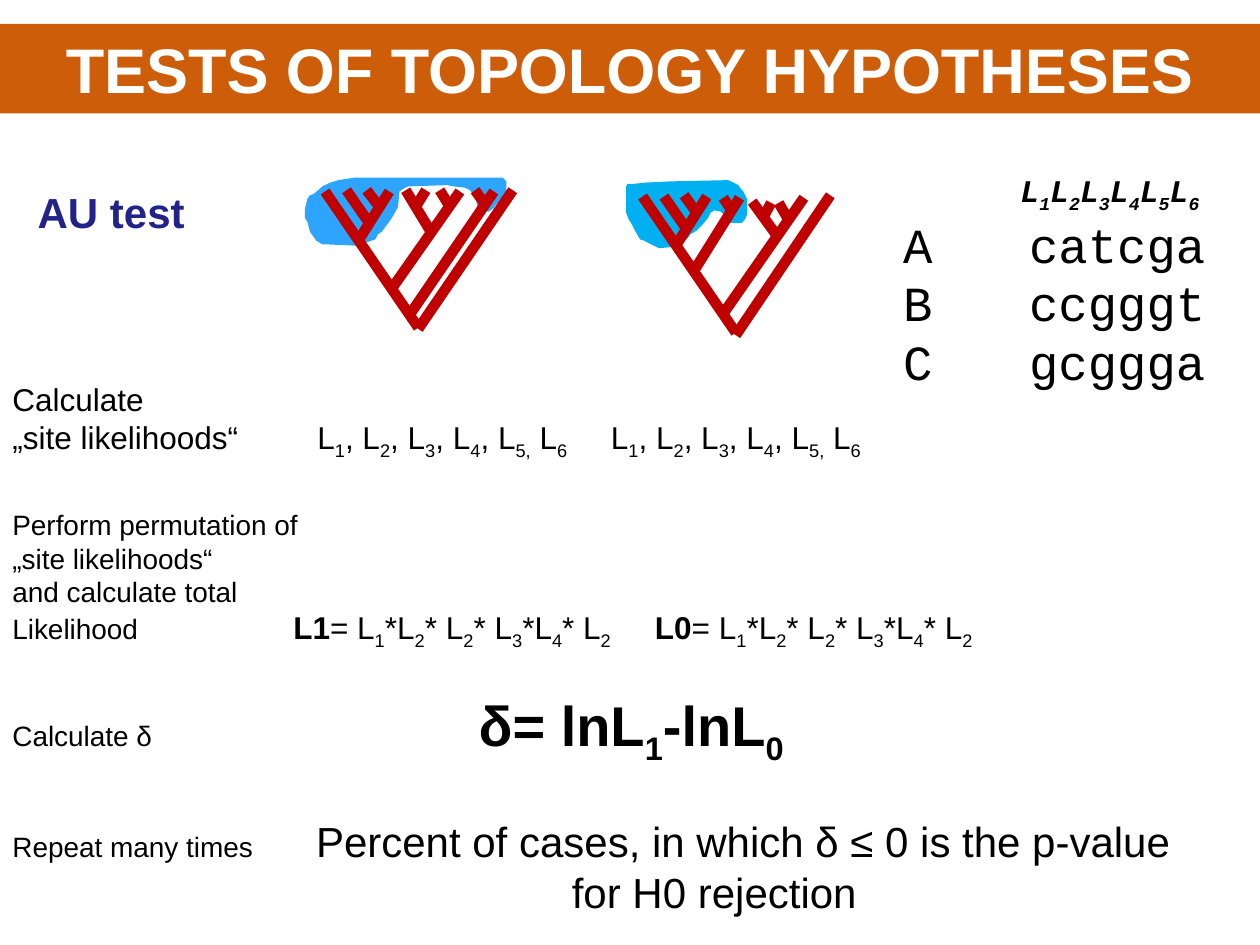
from dataclasses import dataclass
from typing import NamedTuple

from lxml.etree import SubElement
from pptx import Presentation
from pptx.dml.color import RGBColor
from pptx.enum.shapes import MSO_CONNECTOR as Conn
from pptx.enum.text import MSO_ANCHOR as Anchor, MSO_AUTO_SIZE as AutoSize, PP_ALIGN as Align
from pptx.oxml.ns import qn
from pptx.util import Inches, Pt


@dataclass(frozen=True)
class Theme:
    white: str = "FFFFFF"
    black: str = "000000"
    banner: str = "CD5D09"
    navy: str = "22228B"
    branch: str = "C00000"
    sky: str = "2DA5FF"
    cyan: str = "00B0F0"
    sans: str = "Arial"
    mono: str = "Courier New"
    title: int = 36
    formula: int = 32
    sequence: int = 28
    heading: int = 24
    body: int = 18
    label: int = 16
    branch_width: int = 6


T = Theme()


class Run(NamedTuple):
    text: str
    size: int
    bold: bool = False
    italic: bool = False


class Para(NamedTuple):
    runs: list[Run]
    tabs: tuple[float, ...] = ()
    before: int = 0


class Block(NamedTuple):
    left: float
    top: float
    width: float
    height: float
    paras: list[Para]
    font: str = T.sans
    color: str = T.black
    wrap: bool = True


class Cloud(NamedTuple):
    color: str
    points: list[tuple[float, float]]


class Branch(NamedTuple):
    x1: float
    y1: float
    x2: float
    y2: float


SITES = "L|1|, L|2|, L|3|, L|4|, L|5,| L|6|"
PRODUCT = "= L|1|*L|2|* L|2|* L|3|*L|4|* L|2|"
COLUMNS = "".join(f"L|{n}|" for n in range(1, 7))
SEQUENCES = {"A": "catcga", "B": "ccgggt", "C": "gcggga"}

CLOUDS = [
    Cloud(T.cyan, [
        (4.97, 1.48), (4.97, 1.69), (4.99, 1.74), (5.02, 1.79), (5.04, 1.83), (5.08, 1.9),
        (5.11, 1.91), (5.15, 1.93), (5.23, 1.97), (5.35, 1.96), (5.41, 1.93), (5.45, 1.9),
        (5.48, 1.86), (5.53, 1.83), (5.57, 1.79), (5.62, 1.73), (5.64, 1.69), (5.67, 1.67),
        (5.72, 1.68), (5.75, 1.71), (5.78, 1.77), (5.89, 1.77), (5.92, 1.73), (5.93, 1.7),
        (5.93, 1.58), (5.9, 1.52), (5.88, 1.5), (5.86, 1.47), (5.82, 1.45), (5.78, 1.43),
        (5.33, 1.44), (5.12, 1.45), (5.03, 1.46), (4.98, 1.46)]),
    Cloud(T.sky, [
        (2.49, 1.54), (2.56, 1.48), (2.62, 1.45), (2.69, 1.43), (2.75, 1.42), (2.82, 1.41),
        (3.99, 1.41), (4.02, 1.44), (4.02, 1.55), (3.99, 1.59), (3.94, 1.62), (3.92, 1.65),
        (3.88, 1.68), (3.84, 1.68), (3.81, 1.66), (3.79, 1.64), (3.77, 1.56), (3.73, 1.51),
        (3.69, 1.49), (3.6, 1.48), (3.55, 1.47), (3.24, 1.48), (3.2, 1.5), (3.17, 1.52),
        (3.16, 1.64), (3.14, 1.68), (3.11, 1.73), (3.09, 1.76), (3.06, 1.8), (3.03, 1.84),
        (3.0, 1.86), (2.98, 1.9), (2.92, 1.92), (2.87, 1.94), (2.82, 1.95), (2.59, 1.94),
        (2.56, 1.94), (2.51, 1.91), (2.49, 1.88), (2.46, 1.84), (2.44, 1.76), (2.42, 1.73),
        (2.42, 1.66), (2.44, 1.58), (2.46, 1.55)]),
]

FIRST_TREE = [
    Branch(2.58, 1.52, 3.32, 2.6), Branch(4.07, 1.51, 3.32, 2.61),
    Branch(3.92, 1.52, 3.25, 2.5), Branch(3.65, 1.52, 3.11, 2.29),
    Branch(3.09, 1.52, 2.85, 1.9), Branch(2.75, 1.51, 2.93, 1.77),
    Branch(2.91, 1.51, 3.01, 1.64), Branch(3.22, 1.51, 3.42, 1.84),
    Branch(3.49, 1.51, 3.57, 1.64), Branch(3.77, 1.51, 3.85, 1.62),
    Branch(3.38, 1.51, 3.3, 1.64),
]
SECOND_TREE = [
    Branch(5.1, 1.56, 5.84, 2.64), Branch(6.59, 1.55, 5.84, 2.66),
    Branch(5.87, 1.57, 5.52, 2.13), Branch(6.38, 1.57, 5.74, 2.49),
    Branch(5.61, 1.56, 5.37, 1.94), Branch(5.27, 1.56, 5.45, 1.82),
    Branch(5.43, 1.55, 5.53, 1.69), Branch(5.97, 1.6, 6.18, 1.89),
    Branch(6.18, 1.61, 6.25, 1.73), Branch(5.74, 1.57, 5.82, 1.69),
    Branch(6.12, 1.61, 6.05, 1.74),
]

BLOCKS = [
    Block(0.2, 1.43, 1.38, 0.51, [Para([Run("AU test", T.heading, True)])],
          color=T.navy, wrap=False),
    Block(7.07, 1.17, 2.66, 1.99, [
        Para([Run("\t", T.sequence), Run(COLUMNS, T.body, True, True)], (0.93,)),
        *(Para([Run(f"{name}\t{bases}", T.sequence)], (1,)) for name, bases in SEQUENCES.items()),
    ], font=T.mono),
    Block(0, 2.97, 7.29, 0.71, [
        Para([Run("Calculate", T.body)]),
        Para([Run(f"„site likelihoods“\t{SITES}\t{SITES}", T.body)], (2.42, 4.75)),
    ]),
    Block(0, 3.98, 8.2, 1.21, [
        *(Para([Run(line, T.label)]) for line in
          ("Perform permutation of", "„site likelihoods“", "and calculate total")),
        Para([Run("Likelihood\t", T.label), Run("L1", T.body, True), Run(PRODUCT + "\t", T.body),
              Run("L0", T.body, True), Run(PRODUCT, T.body)], (2.23, 5.1)),
    ]),
    Block(0, 5.43, 9.69, 1.85, [
        Para([Run("Calculate δ\t", T.label), Run("δ= lnL|1|-lnL|0|", T.formula, True)], (3.7,)),
        Para([Run("Repeat many times\t", T.label),
              Run("Percent of cases, in which δ ≤ 0 is the p-value", T.heading)], (2.41,), 28),
        Para([Run("\tfor H0 rejection", T.heading)], (4.44,)),
    ]),
]


def rgb(color: str) -> RGBColor:
    return RGBColor.from_string(color)


def add_run(p, run: Run, font: str, color: str) -> None:
    formats = {"name": font, "size": Pt(run.size), "bold": run.bold, "italic": run.italic}
    for i, piece in enumerate(run.text.split("|")):
        if not piece:
            continue
        r = p.add_run()
        r.text = piece
        for key, value in formats.items():
            setattr(r.font, key, value)
        r.font.color.rgb = rgb(color)
        if i % 2:
            r._r.get_or_add_rPr().set("baseline", "-25000")


def add_block(s, block: Block) -> None:
    sp = s.shapes.add_textbox(*map(Inches, block[:4]))
    tf = sp.text_frame
    tf.word_wrap = block.wrap
    for i, para in enumerate(block.paras):
        p = tf.add_paragraph() if i else tf.paragraphs[0]
        if para.before:
            p.space_before = Pt(para.before)
        if para.tabs:
            stops = SubElement(p._p.get_or_add_pPr(), qn("a:tabLst"))
            for tab in para.tabs:
                SubElement(stops, qn("a:tab"), pos=str(Inches(tab)), algn="l")
        for run in para.runs:
            add_run(p, run, block.font, block.color)


def add_cloud(s, cloud: Cloud) -> None:
    start, *rest = [(Inches(x), Inches(y)) for x, y in cloud.points]
    builder = s.shapes.build_freeform(*start)
    builder.add_line_segments(rest, close=True)
    sp = builder.convert_to_shape()
    sp.shadow.inherit = False
    sp.fill.solid()
    sp.fill.fore_color.rgb = rgb(cloud.color)
    sp.line.fill.background()


def add_branch(s, branch: Branch) -> None:
    line = s.shapes.add_connector(Conn.STRAIGHT, *map(Inches, branch))
    line.line.color.rgb = rgb(T.branch)
    line.line.width = Pt(T.branch_width)
    SubElement(line._element.spPr, qn("a:effectLst"))


def set_title(s, text: str) -> None:
    sp = s.shapes.title
    box = {"left": 0, "top": 0.19, "width": 10, "height": 0.71}
    for key, value in box.items():
        setattr(sp, key, Inches(value))
    sp.fill.solid()
    sp.fill.fore_color.rgb = rgb(T.banner)
    tf = sp.text_frame
    for key, value in {"auto_size": AutoSize.NONE, "word_wrap": True,
                       "vertical_anchor": Anchor.MIDDLE}.items():
        setattr(tf, key, value)
    p = tf.paragraphs[0]
    p.alignment = Align.CENTER
    add_run(p, Run(text, T.title, True), T.sans, T.white)


def main() -> None:
    prs = Presentation()
    prs.slide_width, prs.slide_height = Inches(10), Inches(7.5)
    s = prs.slides.add_slide(prs.slide_layouts[5])
    set_title(s, "TESTS OF TOPOLOGY HYPOTHESES")
    for cloud in CLOUDS:
        add_cloud(s, cloud)
    for branch in FIRST_TREE + SECOND_TREE:
        add_branch(s, branch)
    for block in BLOCKS:
        add_block(s, block)
    prs.save("out.pptx")


if __name__ == "__main__":
    main()
